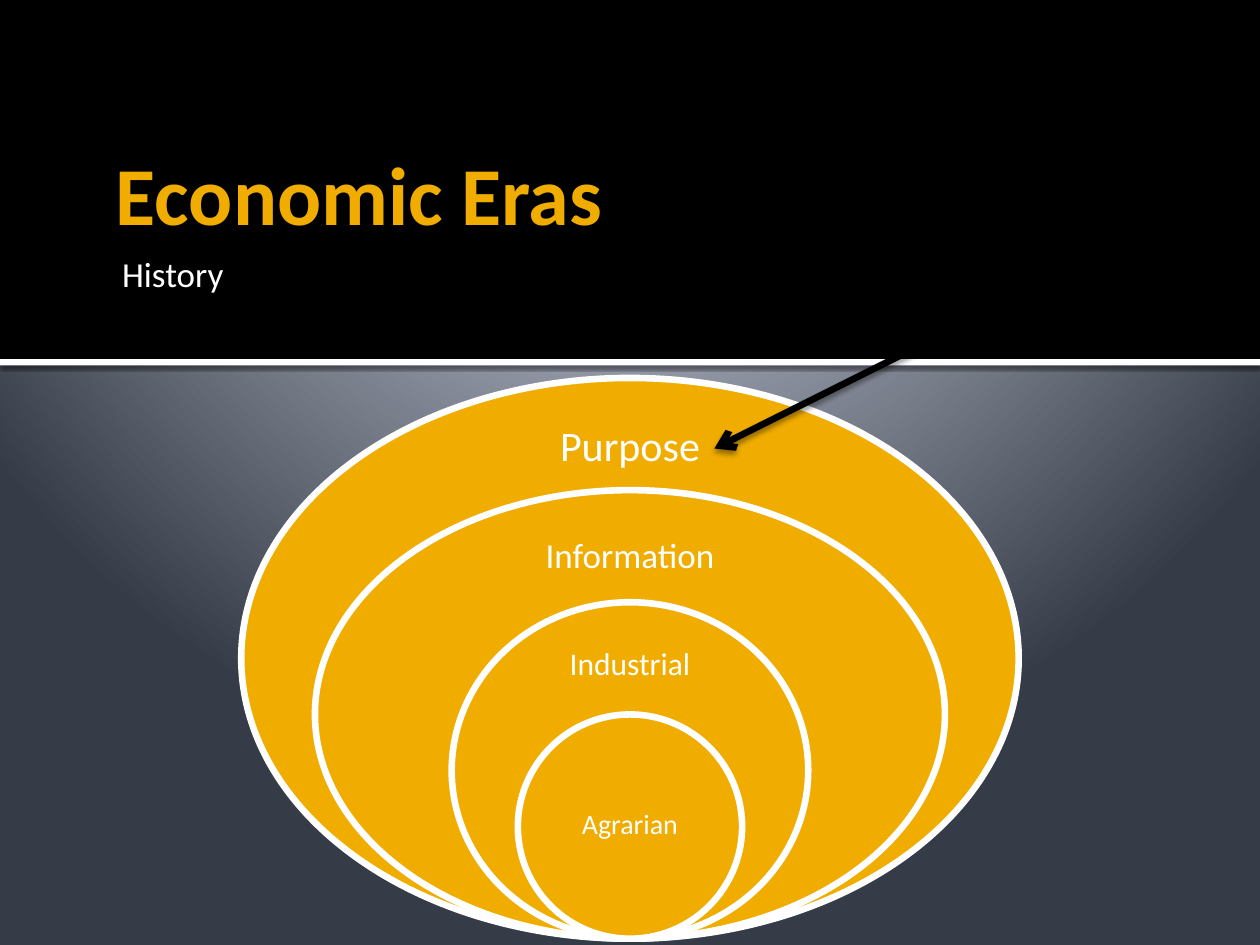
import pptx
import pptx.util
import pptx.oxml
import pptx.oxml.ns
import pptx.dml.color
import pptx.enum.shapes
import pptx.enum.text

Inches = pptx.util.Inches
Pt = pptx.util.Pt
Shape = pptx.enum.shapes.MSO_SHAPE
Anchor = pptx.enum.text.MSO_ANCHOR
Align = pptx.enum.text.PP_ALIGN
rgb = pptx.dml.color.RGBColor.from_string
names = pptx.oxml.ns.nsdecls("a", "p")

theme = {
    "font": "Calibri", "gold": "F0AD00", "white": "FFFFFF", "black": "000000",
    "glow": [(0, "C1C5D3"), (12, "C1C5D3"), (20, "BFC4D2"), (100, "353B47")],
    "title": 47, "body": 20, "eras": [24, 20, 18, 16], "ring": 3.78, "arrow": 3.82,
}

deck = pptx.Presentation()
deck.slide_width, deck.slide_height = Inches(10), Inches(7.5)
slide = deck.slides.add_slide(deck.slide_layouts[6])
shapes = slide.shapes


def write(text, box, size, color="white", bold=False, anchor=Anchor.TOP,
          align=Align.LEFT, inset=(0, 0, 0, 0), space=1.0):
    frame = shapes.add_textbox(*map(Inches, box)).text_frame
    frame.word_wrap = True
    frame.vertical_anchor = anchor
    (frame.margin_left, frame.margin_top,
     frame.margin_right, frame.margin_bottom) = map(Inches, inset)
    line = frame.paragraphs[0]
    line.alignment, line.line_spacing = align, space
    run = line.add_run()
    run.text = text
    run.font.name, run.font.size, run.font.bold = theme["font"], Pt(size), bold
    run.font.color.rgb = rgb(theme[color])


def shade(props, alpha, blur, dist):
    for old in props.findall(pptx.oxml.ns.qn("a:effectLst")):
        props.remove(old)
    props.append(pptx.oxml.parse_xml(
        f'<a:effectLst {names}><a:outerShdw blurRad="{Pt(blur)}" dist="{Pt(dist)}" '
        f'dir="5400000" algn="ctr" rotWithShape="0"><a:srgbClr val="{theme["black"]}">'
        f'<a:alpha val="{alpha * 1000}"/></a:srgbClr></a:outerShdw></a:effectLst>'))


stops = "".join(f'<a:gs pos="{at * 1000}"><a:srgbClr val="{color}"/></a:gs>'
                for at, color in theme["glow"])
slide.element.cSld.insert(0, pptx.oxml.parse_xml(
    f'<p:bg {names}><p:bgPr><a:gradFill rotWithShape="1"><a:gsLst>{stops}</a:gsLst>'
    '<a:path path="circle"><a:fillToRect l="10000" t="-25000" r="10000" b="125000"/></a:path>'
    '</a:gradFill><a:effectLst/></p:bgPr></p:bg>'))

for top, high, color in [(0, 2.85, "black"), (2.85, 0.05, "white")]:
    band = shapes.add_shape(Shape.RECTANGLE, 0, Inches(top), Inches(10), Inches(high))
    band.shadow.inherit = False
    band.fill.solid()
    band.fill.fore_color.rgb = rgb(theme[color])
    band.line.fill.background()
shade(band.element.spPr, 60, 2.5, 0.8)

write("Economic Eras", (0.82, 0.13, 8.76, 1.79), theme["title"], color="gold",
      bold=True, anchor=Anchor.BOTTOM, inset=(0.1, 0, 0.1, 0))
write("History", (0.81, 2, 8.77, 0.75), theme["body"], inset=(0.16, 0, 0.05, 0))

base, step = 7.45, 0.89
eras = [
    ("Purpose", 6.17, 1.72, 3.22, 0.67, 0.19),
    ("Information", 5, 1.75, 4.1, 0.64, 0.16),
    ("Industrial", 2.83, 1.32, 4.98, 0.6, 0.14),
    ("Agrarian", 1.78, 1.26, 6.11, 0.89, 0.12),
]
for rank, (era, wide, span, top, high, pad) in enumerate(eras):
    tall = step * (5 - rank)
    ring = shapes.add_shape(Shape.OVAL, Inches(5 - wide / 2), Inches(base - tall),
                            Inches(wide), Inches(tall))
    ring.shadow.inherit = False
    ring.fill.solid()
    ring.fill.fore_color.rgb = rgb(theme["gold"])
    ring.line.color.rgb = rgb(theme["white"])
    ring.line.width = Pt(theme["ring"])
    write(era, (5 - span / 2, top, span, high), theme["eras"][rank],
          anchor=Anchor.MIDDLE, align=Align.CENTER, inset=(pad,) * 4, space=0.9)

arrow = shapes.add_connector(pptx.enum.shapes.MSO_CONNECTOR.STRAIGHT,
                             Inches(8.17), Inches(2.31), Inches(5.67), Inches(3.56))
arrow.line.color.rgb = rgb(theme["black"])
arrow.line.width = Pt(theme["arrow"])
arrow.line._get_or_add_ln().append(
    pptx.oxml.parse_xml(f'<a:tailEnd {names} type="arrow"/>'))
shade(arrow.element.spPr, 38, 3.1, 2)

deck.save("out.pptx")
